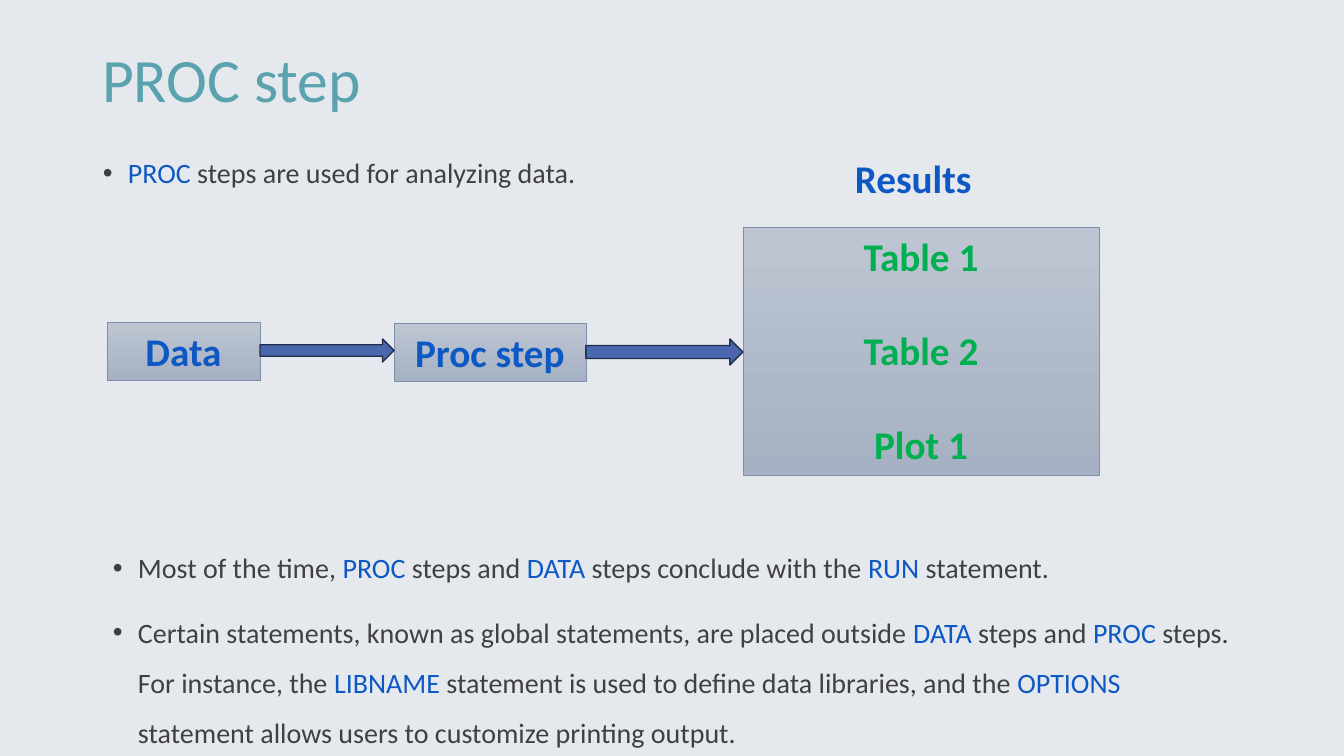
from lxml import etree
from pptx import Presentation, util as u
from pptx.dml.color import RGBColor
from pptx.enum import shapes, text
from pptx.oxml import ns

PX = 914400 / 100.8
BLUE, GREEN, GREY = "0E58C4", "00B050", "404040"


def rgb(value):
    return RGBColor.from_string(value)


def add_span(para, words, size, colour, bold=False):
    span = para.add_run()
    span.text = words
    span.font.name = "Calibri"
    span.font.size = u.Pt(size)
    span.font.bold = bold
    span.font.color.rgb = rgb(colour)


# Page and background
deck = Presentation()
deck.slide_width, deck.slide_height = round(1344 * PX), round(756 * PX)
page = deck.slides.add_slide(deck.slide_layouts[5])
page.background.fill.solid()
page.background.fill.fore_color.rgb = rgb("E5E9EE")

# Title
title = page.shapes.title
title.left, title.top, title.width, title.height = [round(n * PX) for n in (92, 40, 1159, 86)]
title.text_frame.vertical_anchor = text.MSO_ANCHOR.MIDDLE
para = title.text_frame.paragraphs[0]
para.alignment = text.PP_ALIGN.LEFT
para.line_spacing = 0.9
add_span(para, "PROC step", 44, "5AA2AE")

# Bulleted text, with keywords between bars
bullet_boxes = [
    ((93, 134, 572, 68), ["|PROC| steps are used for analyzing data."]),
    ((103, 529, 1139, 227), [
        "Most of the time, |PROC| steps and |DATA| steps conclude with the |RUN| statement.",
        "Certain statements, known as global statements, are placed outside |DATA| steps and "
        "|PROC| steps. For instance, the |LIBNAME| statement is used to define data libraries, "
        "and the |OPTIONS |statement allows users to customize printing output.",
    ]),
]
for place, items in bullet_boxes:
    box = page.shapes.add_textbox(*[round(n * PX) for n in place])
    frame = box.text_frame
    frame.word_wrap = True
    for i, item in enumerate(items):
        para = frame.add_paragraph() if i else frame.paragraphs[0]
        para.line_spacing = 1.5
        para.space_before = u.Pt(10)
        props = para._p.get_or_add_pPr()
        props.set("marL", str(round(25 * PX)))
        props.set("indent", str(round(-25 * PX)))
        bullet_colour = etree.SubElement(props, ns.qn("a:buClr"))
        etree.SubElement(bullet_colour, ns.qn("a:srgbClr"), val=GREY)
        etree.SubElement(props, ns.qn("a:buFont"), typeface="Arial")
        etree.SubElement(props, ns.qn("a:buChar"), char="•")
        for j, words in enumerate(item.split("|")):
            if words:
                add_span(para, words, 20, BLUE if j % 2 else GREY)

# Flow boxes
flow_boxes = [
    ((743, 227, 356, 248), GREEN, ["Table 1", "Table 2", "Plot 1"]),
    ((394, 323, 192, 58), BLUE, ["Proc step"]),
    ((107, 322, 153, 58), BLUE, ["Data"]),
]
for place, colour, lines in flow_boxes:
    box = page.shapes.add_shape(shapes.MSO_SHAPE.RECTANGLE, *[round(n * PX) for n in place])
    box.shadow.inherit = False
    box.fill.gradient()
    box.fill.gradient_angle = 270
    for stop, shade in zip(box.fill.gradient_stops, ("BEC5D2", "A6B1C3")):
        stop.color.rgb = rgb(shade)
    box.fill.gradient_stops[0].position = 0
    box.fill.gradient_stops[1].position = 1
    box.line.color.rgb = rgb("7F8FA9")
    box.line.width = u.Pt(0.5)
    frame = box.text_frame
    frame.word_wrap = True
    frame.vertical_anchor = text.MSO_ANCHOR.TOP
    for i, words in enumerate(lines):
        para = frame.add_paragraph() if i else frame.paragraphs[0]
        para.alignment = text.PP_ALIGN.CENTER
        para.space_before = u.Pt(33.5 if i else 0)
        add_span(para, words, 28, colour, True)

# Results heading
heading = page.shapes.add_textbox(*[round(n * PX) for n in (845, 149, 153, 58)])
heading.text_frame.word_wrap = True
add_span(heading.text_frame.paragraphs[0], "Results", 28, BLUE, True)

# Arrows between the boxes
for place in ((260, 339, 134, 23), (586, 339, 157, 26)):
    arrow = page.shapes.add_shape(shapes.MSO_SHAPE.RIGHT_ARROW, *[round(n * PX) for n in place])
    arrow.shadow.inherit = False
    arrow.fill.solid()
    arrow.fill.fore_color.rgb = rgb("4A66AC")
    arrow.line.color.rgb = rgb("202D4B")
    arrow.line.width = u.Pt(1)

deck.save("out.pptx")
